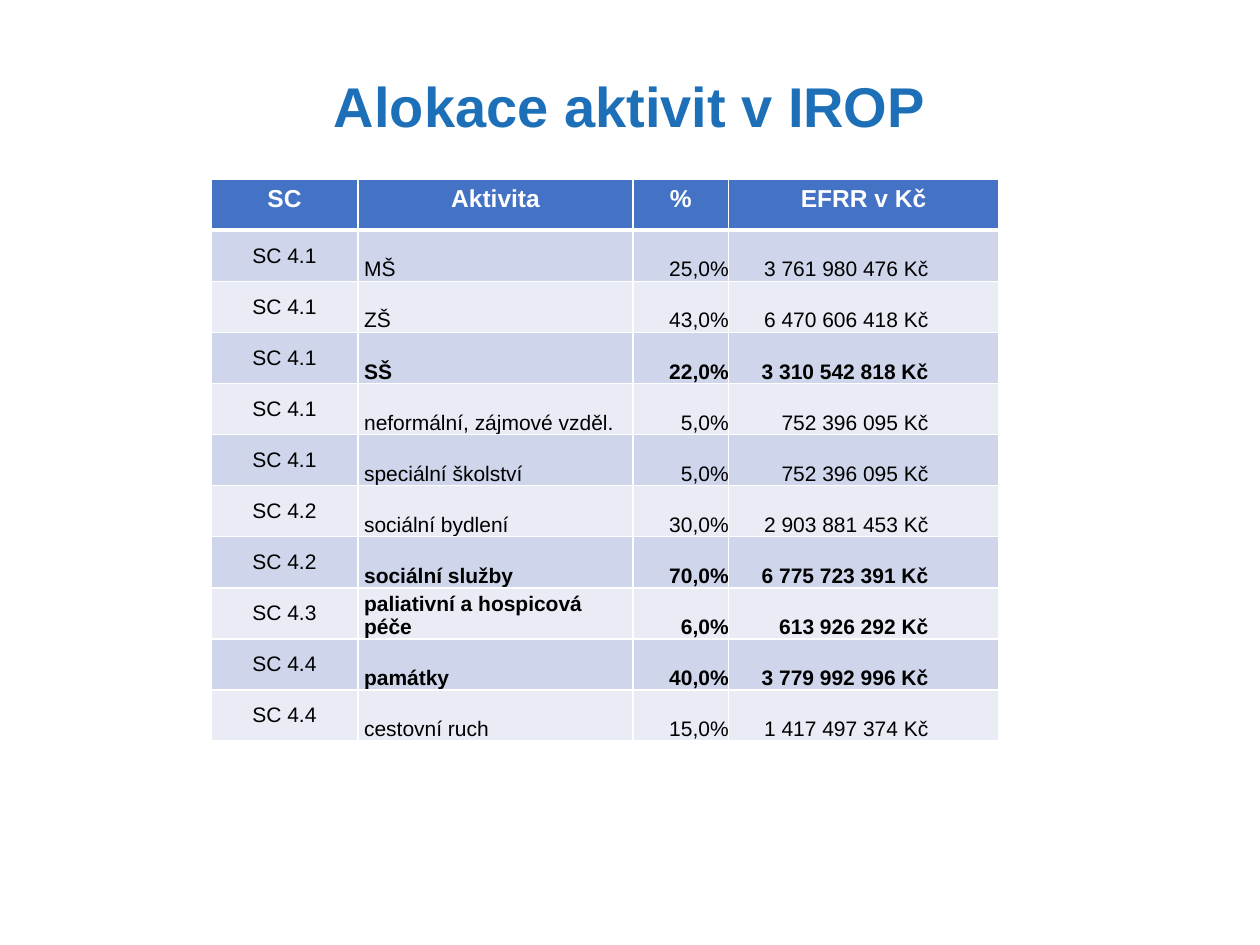
from lxml import etree
from pptx import Presentation
from pptx.dml.color import RGBColor
from pptx.enum import text
from pptx.oxml import ns
from pptx.util import Cm, Pt

FONT = "Arial"
TITLE_BLUE = RGBColor(0x1D, 0x70, 0xB8)
HEADER_BLUE = RGBColor(0x44, 0x72, 0xC4)
BAND_DARK = RGBColor(0xCF, 0xD5, 0xEA)
BAND_LIGHT = RGBColor(0xE9, 0xEB, 0xF5)
WHITE = RGBColor(0xFF, 0xFF, 0xFF)
BLACK = RGBColor(0x00, 0x00, 0x00)

TITLE_BOX = (Cm(1.4), Cm(1.3), Cm(22.6), Cm(1.63))
TABLE_BOX = (Cm(4.25), Cm(3.61), Cm(15.88), Cm(11.33))
COLUMN_WIDTHS = (Cm(2.97), Cm(5.54), Cm(1.93), Cm(5.44))

HEADINGS = ("SC", "Aktivita", "%", "EFRR v Kč")
ALLOCATIONS = (
    # goal, activity, share, amount, highlighted
    ("SC 4.1", "MŠ", "25,0%", "3 761 980 476 Kč", False),
    ("SC 4.1", "ZŠ", "43,0%", "6 470 606 418 Kč", False),
    ("SC 4.1", "SŠ", "22,0%", "3 310 542 818 Kč", True),
    ("SC 4.1", "neformální, zájmové vzděl.", "5,0%", "752 396 095 Kč", False),
    ("SC 4.1", "speciální školství", "5,0%", "752 396 095 Kč", False),
    ("SC 4.2", "sociální bydlení", "30,0%", "2 903 881 453 Kč", False),
    ("SC 4.2", "sociální služby", "70,0%", "6 775 723 391 Kč", True),
    ("SC 4.3", "paliativní a hospicová\npéče", "6,0%", "613 926 292 Kč", True),
    ("SC 4.4", "památky", "40,0%", "3 779 992 996 Kč", True),
    ("SC 4.4", "cestovní ruch", "15,0%", "1 417 497 374 Kč", False),
)

ALIGN, ANCHOR = text.PP_ALIGN, text.MSO_ANCHOR
NO_MARGINS = dict.fromkeys(
    ("margin_left", "margin_top", "margin_right", "margin_bottom"), 0)
# One (alignment, cell format) pair for each column of the body
BODY_COLUMNS = (
    (ALIGN.CENTER, {**NO_MARGINS, "vertical_anchor": ANCHOR.MIDDLE}),
    (ALIGN.LEFT, {**NO_MARGINS, "vertical_anchor": ANCHOR.BOTTOM,
                  "margin_left": Cm(0.12)}),
    (ALIGN.RIGHT, {**NO_MARGINS, "vertical_anchor": ANCHOR.BOTTOM}),
    (ALIGN.RIGHT, {**NO_MARGINS, "vertical_anchor": ANCHOR.BOTTOM,
                   "margin_right": Cm(1.41)}),
)


def set_attributes(target, values):
    for name, value in values.items():
        setattr(target, name, value)


def format_paragraph(paragraph, alignment, size, color, bold):
    paragraph.alignment = alignment
    set_attributes(paragraph.font, {"name": FONT, "size": Pt(size), "bold": bold})
    paragraph.font.color.rgb = color


def set_borders(cell, top, bottom):
    """Draw white cell borders; top and bottom are widths in points."""
    properties = cell._tc.get_or_add_tcPr()
    widths = {"a:lnL": 1, "a:lnR": 1, "a:lnT": top, "a:lnB": bottom}
    for position, (tag, width) in enumerate(widths.items()):
        line = etree.Element(ns.qn(tag), w=str(Pt(width)))
        fill = etree.SubElement(line, ns.qn("a:solidFill"))
        etree.SubElement(fill, ns.qn("a:srgbClr"), val=str(WHITE))
        properties.insert(position, line)


def fill_cell(cell, content, background, alignment, size, color, bold):
    cell.text = content
    cell.fill.solid()
    cell.fill.fore_color.rgb = background
    for paragraph in cell.text_frame.paragraphs:
        format_paragraph(paragraph, alignment, size, color, bold)


def place_title(slide, box):
    title = slide.shapes.title
    title.left, title.top, title.width, title.height = box
    frame = title.text_frame
    frame.text = "Alokace aktivit v IROP"
    set_attributes(frame, {"word_wrap": True, "vertical_anchor": ANCHOR.MIDDLE,
                           "auto_size": text.MSO_AUTO_SIZE.SHAPE_TO_FIT_TEXT})
    format_paragraph(frame.paragraphs[0], ALIGN.CENTER, 32, TITLE_BLUE, True)


def place_allocation_table(slide, box):
    table = slide.shapes.add_table(
        len(ALLOCATIONS) + 1, len(HEADINGS), *box).table
    for column, width in zip(table.columns, COLUMN_WIDTHS):
        column.width = width

    for cell, heading in zip(table.rows[0].cells, HEADINGS):
        fill_cell(cell, heading, HEADER_BLUE, ALIGN.CENTER, 14, WHITE, True)
        set_borders(cell, top=1, bottom=3)

    for number, (*values, highlighted) in enumerate(ALLOCATIONS, start=1):
        background = BAND_DARK if number % 2 else BAND_LIGHT
        for column, (value, (alignment, cell_format)) in enumerate(
                zip(values, BODY_COLUMNS)):
            cell = table.cell(number, column)
            bold = highlighted and column > 0
            fill_cell(cell, value, background, alignment, 12, BLACK, bold)
            set_attributes(cell, cell_format)
            set_borders(cell, top=3 if number == 1 else 1, bottom=1)


def main():
    presentation = Presentation()
    presentation.slide_width, presentation.slide_height = Cm(25.4), Cm(19.05)
    slide = presentation.slides.add_slide(presentation.slide_layouts[5])
    place_title(slide, TITLE_BOX)
    place_allocation_table(slide, TABLE_BOX)
    presentation.save("out.pptx")


if __name__ == "__main__":
    main()
